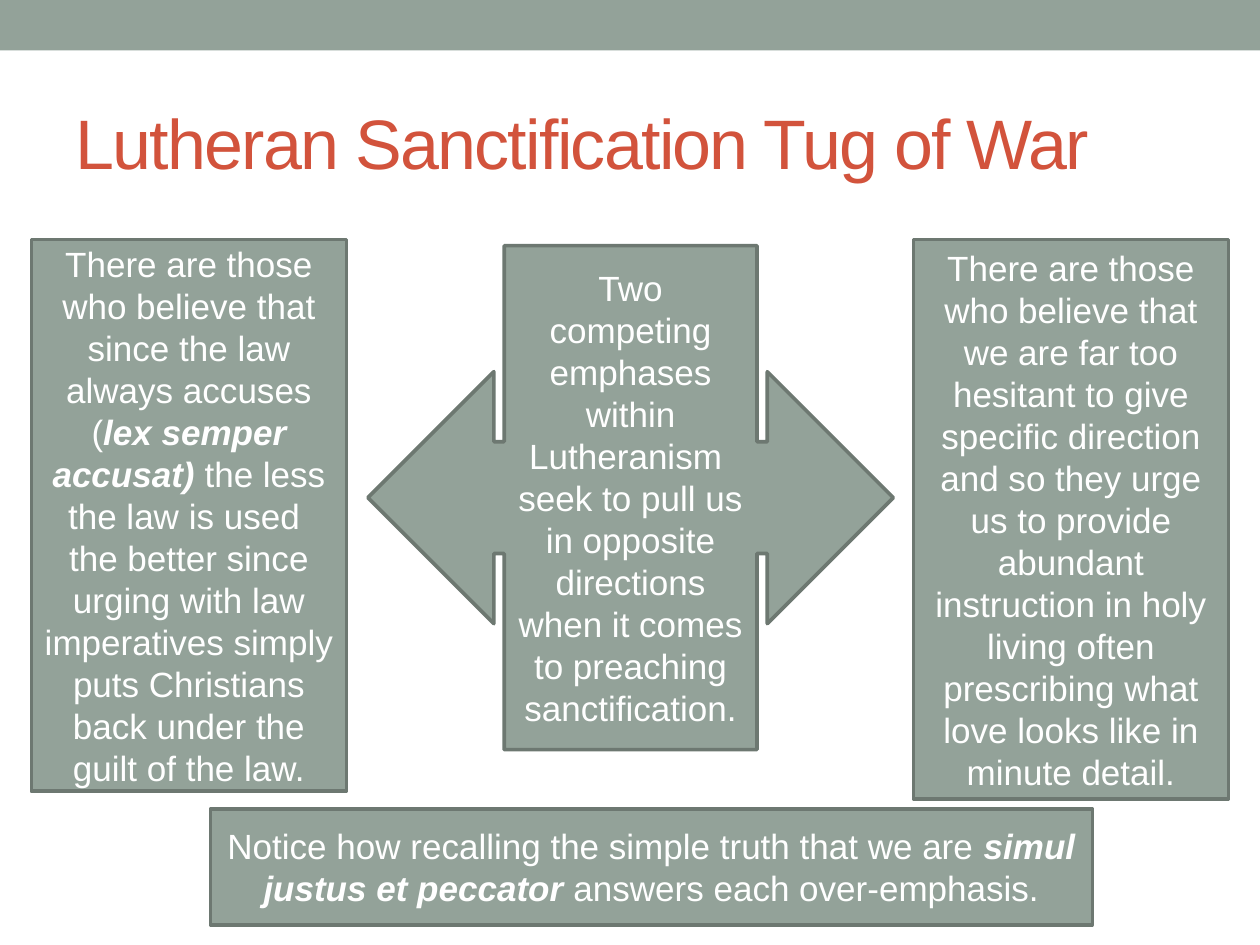
from dataclasses import dataclass

from pptx import Presentation
from pptx.dml.color import RGBColor
from pptx.enum.shapes import MSO_SHAPE
from pptx.enum.text import MSO_ANCHOR, MSO_AUTO_SIZE, PP_ALIGN
from pptx.util import Emu, Pt

RECT = MSO_SHAPE.RECTANGLE
CALLOUT = MSO_SHAPE.LEFT_RIGHT_ARROW_CALLOUT
MIDDLE = MSO_ANCHOR.MIDDLE
LEFT, CENTER = PP_ALIGN.LEFT, PP_ALIGN.CENTER
NO_AUTOFIT = MSO_AUTO_SIZE.NONE
TITLE_ONLY = 5
EMU_PER_PX = 9144  # 100 px to the inch


@dataclass(frozen=True)
class Theme:
    font: str = "Arial"
    sage: RGBColor = RGBColor(0x93, 0xA2, 0x99)
    outline: RGBColor = RGBColor(0x6D, 0x78, 0x71)
    title: RGBColor = RGBColor(0xD2, 0x53, 0x3C)
    text: RGBColor = RGBColor(0xFF, 0xFF, 0xFF)
    title_size: int = 40
    body_size: int = 20
    line_width: float = 2.08


@dataclass(frozen=True)
class Box:
    left: int
    top: int
    width: int
    height: int

    def emu(self) -> tuple[Emu, ...]:
        sides = (self.left, self.top, self.width, self.height)
        return tuple(Emu(side * EMU_PER_PX) for side in sides)


@dataclass(frozen=True)
class Run:
    text: str
    emphasis: bool = False


@dataclass(frozen=True)
class Panel:
    box: Box
    paragraphs: tuple[tuple[Run, ...], ...]
    shape: MSO_SHAPE = RECT
    adjustments: tuple[float, ...] = ()


THEME = Theme()
SLIDE = Box(0, 0, 1000, 750)
BAND = Box(0, 0, 1000, 40)
TITLE = Box(50, 58, 900, 108)

PANELS = (
    Panel(
        Box(292, 195, 417, 400),
        ((Run("Two competing emphases within Lutheranism  seek to pull us in "
              "opposite directions when it comes to preaching sanctification."),),),
        CALLOUT,
        (0.222, 0.25, 0.25, 0.481),
    ),
    Panel(
        Box(25, 190, 250, 438),
        ((Run("There are those who believe that since the law always accuses ("),
          Run("lex semper accusat)", emphasis=True),
          Run(" the less the law is used ")),
         (Run("the better since urging with law imperatives simply puts "
              "Christians back under the guilt of the law."),)),
    ),
    Panel(
        Box(725, 190, 250, 444),
        ((Run("There are those who believe that we are far too hesitant to give "
              "specific direction and so they urge us to provide abundant "
              "instruction in holy living often prescribing what love looks "
              "like in minute detail."),),),
    ),
    Panel(
        Box(167, 642, 700, 92),
        ((Run("Notice how recalling the simple truth that we are "),
          Run("simul justus et peccator ", emphasis=True),
          Run("answers each over-emphasis.")),),
    ),
)


def add_run(p, text: str, *, size: int, color: RGBColor, emphasis: bool = False):
    r = p.add_run()
    r.text = text
    r.font.name = THEME.font
    r.font.size = Pt(size)
    r.font.color.rgb = color
    r.font.bold = r.font.italic = emphasis
    return r


def add_filled(slide, kind: MSO_SHAPE, box: Box):
    sp = slide.shapes.add_shape(kind, *box.emu())
    sp.shadow.inherit = False
    sp.fill.solid()
    sp.fill.fore_color.rgb = THEME.sage
    return sp


def add_band(slide) -> None:
    add_filled(slide, RECT, BAND).line.fill.background()


def set_title(slide, text: str) -> None:
    sp = slide.shapes.title
    sp.left, sp.top, sp.width, sp.height = TITLE.emu()
    tf = sp.text_frame
    tf.auto_size = NO_AUTOFIT
    tf.vertical_anchor = MIDDLE
    p = tf.paragraphs[0]
    p.alignment = LEFT
    r = add_run(p, text, size=THEME.title_size, color=THEME.title)
    r.font._element.set("spc", "-100")  # letter spacing, hundredths of a point


def add_panel(slide, panel: Panel) -> None:
    sp = add_filled(slide, panel.shape, panel.box)
    sp.line.color.rgb = THEME.outline
    sp.line.width = Pt(THEME.line_width)
    for i, value in enumerate(panel.adjustments):
        sp.adjustments[i] = value
    tf = sp.text_frame
    tf.word_wrap = True
    tf.vertical_anchor = MIDDLE
    for i, runs in enumerate(panel.paragraphs):
        p = tf.add_paragraph() if i else tf.paragraphs[0]
        p.alignment = CENTER
        for run in runs:
            add_run(p, run.text, size=THEME.body_size, color=THEME.text,
                    emphasis=run.emphasis)


def main() -> None:
    prs = Presentation()
    prs.slide_width, prs.slide_height = SLIDE.emu()[2:]
    slide = prs.slides.add_slide(prs.slide_layouts[TITLE_ONLY])
    add_band(slide)
    set_title(slide, "Lutheran Sanctification Tug of War")
    for panel in PANELS:
        add_panel(slide, panel)
    prs.save("out.pptx")


if __name__ == "__main__":
    main()
